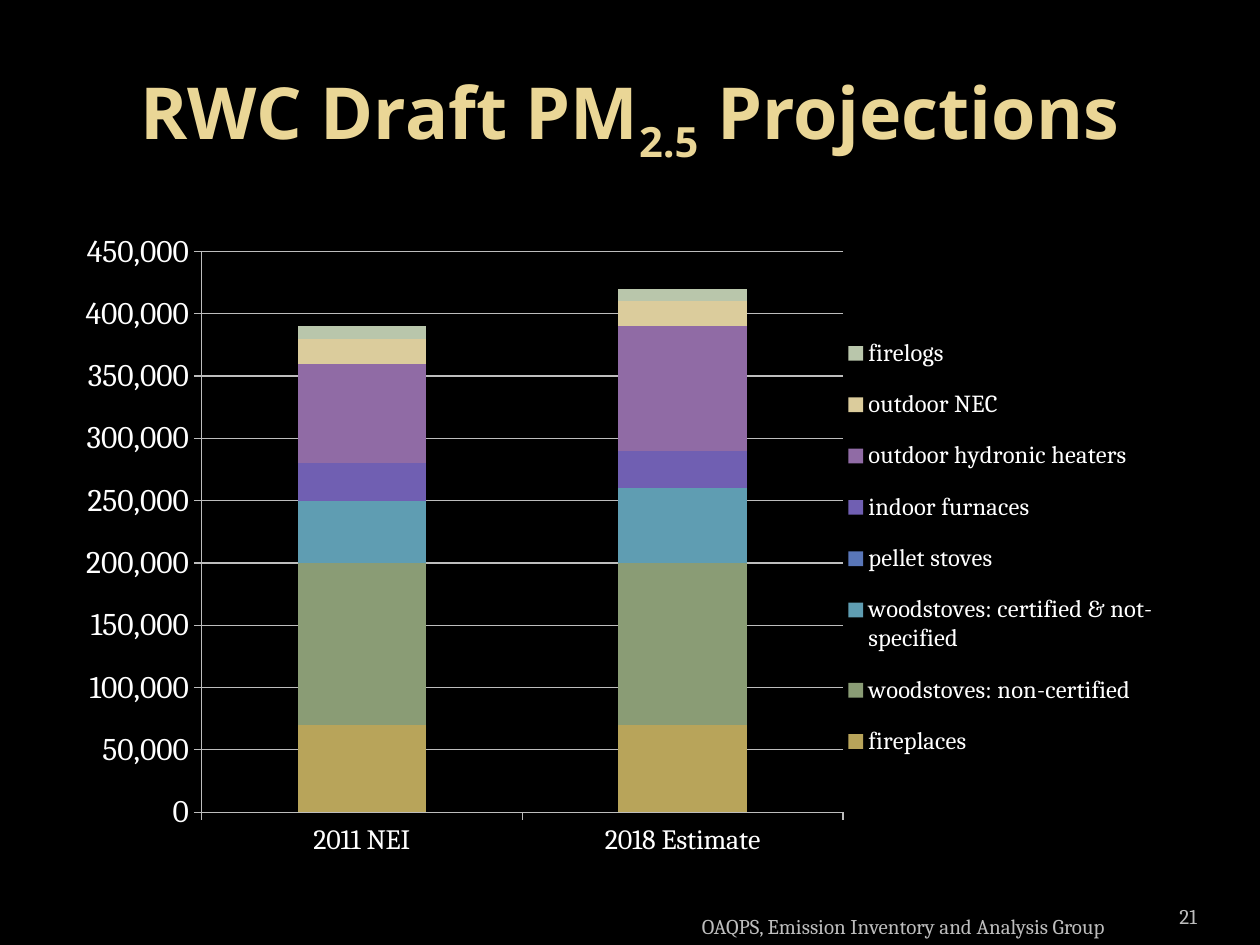
from dataclasses import dataclass

from lxml import etree
from pptx import Presentation
from pptx import util as u
from pptx.chart.data import CategoryChartData
from pptx.dml.color import RGBColor
from pptx.enum import chart as charts, text
from pptx.oxml import ns


@dataclass(frozen=True)
class Theme:
    background: str = "000000"
    title: str = "EAD696"
    body: str = "FFFFFF"
    muted: str = "BDBDBD"
    title_font: str = "Open Sans"
    body_font: str = "Cambria"
    title_size: int = 41
    value_size: int = 18
    category_size: int = 16
    legend_size: int = 14
    footer_size: int = 12


CATEGORIES = ["2011 NEI", "2018 Estimate"]
EMISSIONS = [
    ("fireplaces", (70000, 70000), "B8A45A"),
    ("woodstoves: non-certified", (130000, 130000), "8A9C75"),
    ("woodstoves: certified & not-specified", (50000, 60000), "5F9DB2"),
    ("pellet stoves", (0, 0), "5976B8"),
    ("indoor furnaces", (30000, 30000), "705FB2"),
    ("outdoor hydronic heaters", (80000, 100000), "906BA5"),
    ("outdoor NEC", (20000, 20000), "DBCC9C"),
    ("firelogs", (10000, 10000), "B9C6AB"),
]


def set_layout(part, position, inner=False):
    """Fix a chart part at x, y, w, h in percent of the chart."""
    for old in part.findall(ns.qn("c:layout")):
        part.remove(old)
    layout = etree.Element(ns.qn("c:layout"))
    manual = etree.SubElement(layout, ns.qn("c:manualLayout"))
    settings = [("layoutTarget", "inner")] if inner else []
    settings += [("xMode", "edge"), ("yMode", "edge")]
    settings += [(name, share / 100) for name, share in zip("xywh", position)]
    for name, value in settings:
        etree.SubElement(manual, ns.qn(f"c:{name}")).set("val", str(value))
    before = part.find(ns.qn("c:legendPos"))
    if before is None:
        part.insert(0, layout)
    else:
        before.addnext(layout)


class SlideBuilder:
    def __init__(self, deck, theme):
        self.deck, self.theme = deck, theme
        self.slide = deck.slides.add_slide(deck.slide_layouts[5])
        fill = self.slide.background.fill
        fill.solid()
        fill.fore_color.rgb = RGBColor.from_string(theme.background)

    def area(self, left, top, width, height):
        """Turn percentages of the slide's size into lengths."""
        wide, high = self.deck.slide_width, self.deck.slide_height
        return [round(length / 100) for length in
                (left * wide, top * high, width * wide, height * high)]

    def style(self, font, size, color, name=None, bold=False):
        font.size = u.Pt(size)
        font.name = name or self.theme.body_font
        font.bold = bold
        font.color.rgb = RGBColor.from_string(color)

    def title(self, area, spans):
        box = self.slide.shapes.title
        box.left, box.top, box.width, box.height = self.area(*area)
        box.text_frame.vertical_anchor = text.MSO_ANCHOR.MIDDLE
        para = box.text_frame.paragraphs[0]
        para.alignment = text.PP_ALIGN.CENTER
        for words, baseline in spans:
            span = para.add_run()
            span.text = words
            self.style(span.font, self.theme.title_size, self.theme.title,
                       self.theme.title_font, bold=True)
            if baseline:
                span.font._element.set("baseline", str(baseline * 1000))

    def footer(self, area, words, alignment, side_inset=0.1):
        box = self.slide.shapes.add_textbox(*self.area(*area))
        frame = box.text_frame
        frame.word_wrap = True
        frame.vertical_anchor = text.MSO_ANCHOR.BOTTOM
        frame.margin_left = frame.margin_right = u.Inches(side_inset)
        para = frame.paragraphs[0]
        para.alignment = alignment
        span = para.add_run()
        span.text = words
        self.style(span.font, self.theme.footer_size, self.theme.muted)

    def axis(self, axis, size):
        axis.major_tick_mark = charts.XL_TICK_MARK.OUTSIDE
        axis.minor_tick_mark = charts.XL_TICK_MARK.NONE
        self.style(axis.tick_labels.font, size, self.theme.body)
        self.line(axis.format.line)

    def line(self, line):
        line.width = u.Pt(0.75)
        line.color.rgb = RGBColor.from_string(self.theme.muted)

    def stacked_columns(self, area, categories, rows, plot_area, legend_area):
        data = CategoryChartData(number_format="#,##0")
        data.categories = categories
        for name, values, _ in rows:
            data.add_series(name, values)
        chart = self.slide.shapes.add_chart(
            charts.XL_CHART_TYPE.COLUMN_STACKED, *self.area(*area), data).chart
        self.style(chart.font, self.theme.legend_size, self.theme.body)
        chart.has_title = False

        plot = chart.plots[0]
        plot.vary_by_categories = False
        plot.gap_width, plot.overlap = 150, 100
        for series, (_, _, color) in zip(plot.series, rows):
            series.format.fill.solid()
            series.format.fill.fore_color.rgb = RGBColor.from_string(color)

        self.axis(chart.category_axis, self.theme.category_size)
        values = chart.value_axis
        self.axis(values, self.theme.value_size)
        values.minimum_scale, values.maximum_scale = 0, 450000
        values.major_unit = 50000
        values.tick_labels.number_format = "#,##0"
        values.tick_labels.number_format_is_linked = False
        values.has_major_gridlines = True
        self.line(values.major_gridlines.format.line)

        chart.has_legend = True
        chart.legend.position = charts.XL_LEGEND_POSITION.RIGHT
        chart.legend.include_in_layout = False
        self.style(chart.legend.font, self.theme.legend_size, self.theme.body)
        plot_part = chart._chartSpace.chart.plotArea
        set_layout(plot_part, plot_area, inner=True)
        set_layout(chart.legend._element, legend_area)


def main():
    deck = Presentation()
    deck.slide_width, deck.slide_height = u.Inches(10), u.Inches(7.5)
    page = SlideBuilder(deck, Theme())
    page.title((5, 4, 90, 16.67),
               [("RWC Draft PM", 0), ("2.5", -25), (" Projections", 0)])
    page.stacked_columns((5, 23.33, 90, 68.67), CATEGORIES, EMISSIONS,
                         plot_area=(12.2, 4.8, 56.6, 86.4),
                         legend_area=(68.2, 14.8, 29, 71.2))
    page.footer((51.7, 94.67, 40, 5.33),
                "OAQPS, Emission Inventory and Analysis Group",
                text.PP_ALIGN.CENTER)
    page.footer((86.7, 93.6, 8.3, 5.33), "21", text.PP_ALIGN.RIGHT,
                side_inset=0)
    deck.save("out.pptx")


if __name__ == "__main__":
    main()
